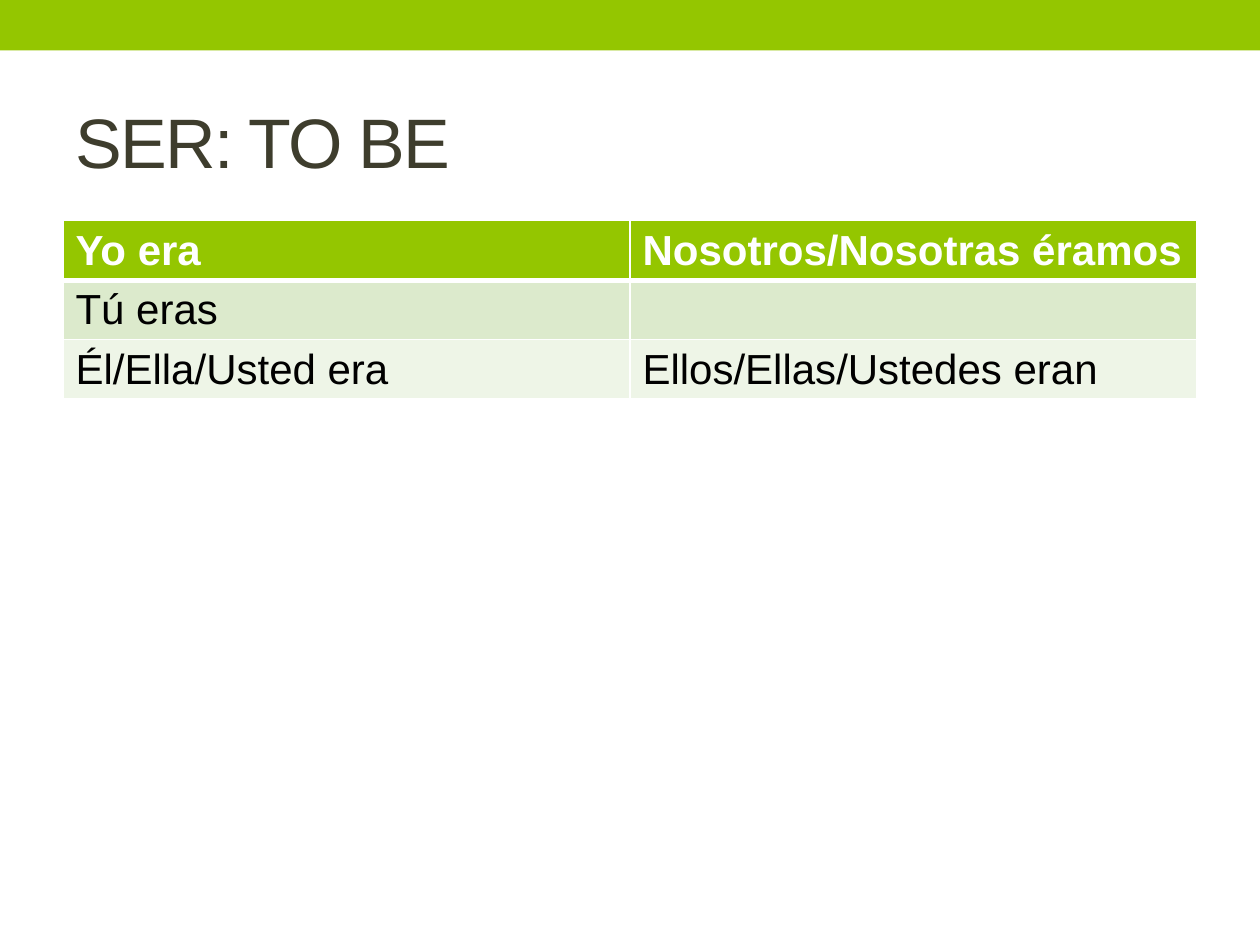
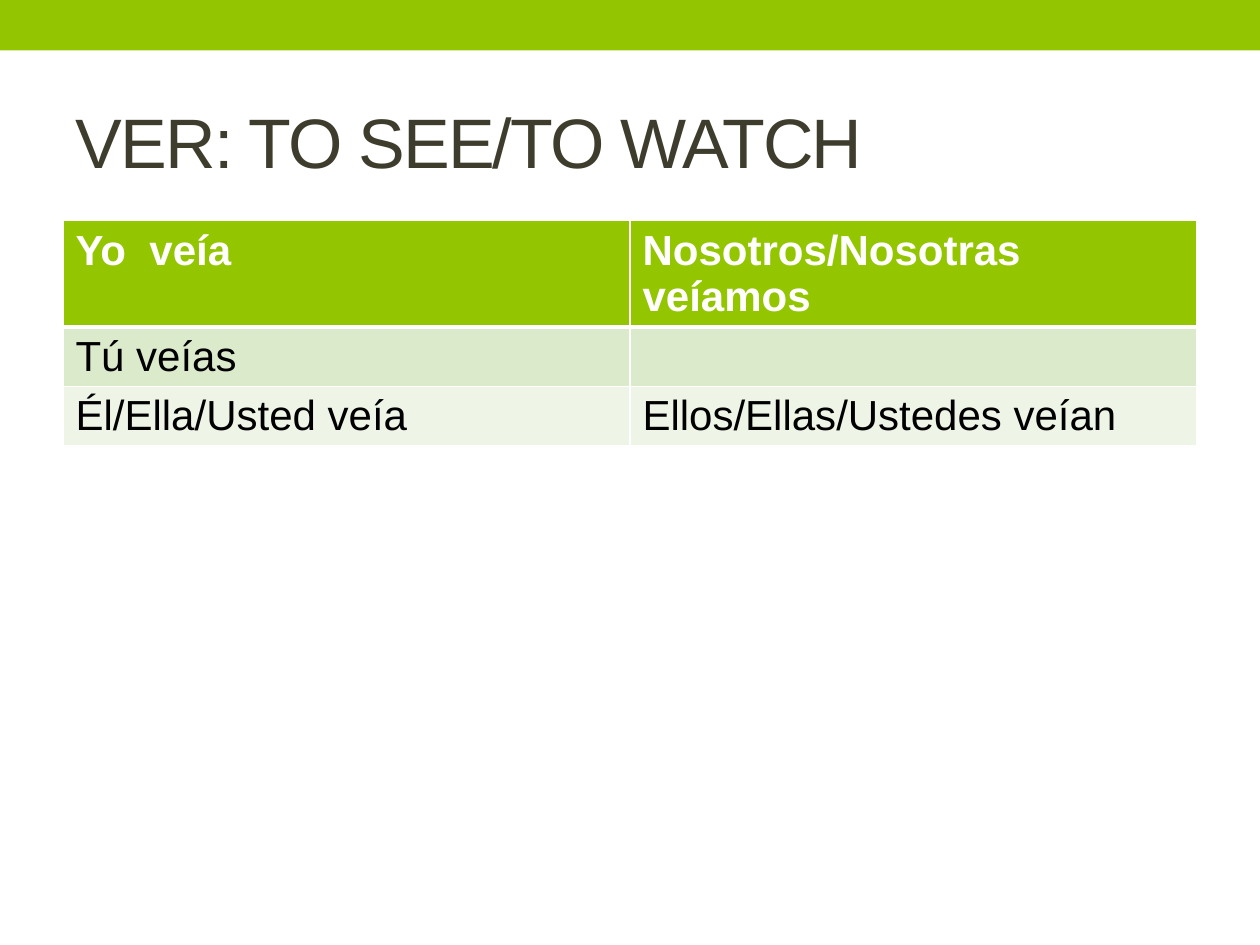
from dataclasses import dataclass

from lxml import etree
from pptx import Presentation
from pptx.dml.color import RGBColor
from pptx.enum.shapes import MSO_SHAPE
from pptx.enum.text import MSO_ANCHOR, MSO_AUTO_SIZE, PP_ALIGN
from pptx.oxml.ns import qn
from pptx.util import Cm, Pt

RECT = MSO_SHAPE.RECTANGLE
MIDDLE = MSO_ANCHOR.MIDDLE
NO_FIT = MSO_AUTO_SIZE.NONE
LEFT = PP_ALIGN.LEFT
TITLE_ONLY = 5


@dataclass(frozen=True)
class Theme:
    font: str = "Arial"
    title_size: int = 40
    cell_size: int = 24
    track: int = -100  # hundredths of a point
    green: str = "94C600"
    dark: str = "3E3D2D"
    white: str = "FFFFFF"
    black: str = "000000"
    bands: tuple = ("DCEACC", "EEF5E7")
    thin: int = 1
    thick: int = 3


THEME = Theme()

# Boxes: left, top, width, height
PAGE = (Cm(25.4), Cm(19.05))
BAND = (0, 0, PAGE[0], Cm(1.02))
TITLE = (Cm(1.27), Cm(1.47), Cm(22.86), Cm(2.74))
GRID = (Cm(1.27), Cm(4.45), Cm(22.86), Cm(3.12))

VERBS = [
    ("SER: TO BE", [
        ("Yo era", "Nosotros/Nosotras éramos"),
        ("Tú eras", ""),
        ("Él/Ella/Usted era", "Ellos/Ellas/Ustedes eran"),
    ]),
    ("VER: TO SEE/TO WATCH", [
        ("Yo  veía", "Nosotros/Nosotras veíamos"),
        ("Tú veías", ""),
        ("Él/Ella/Usted veía", "Ellos/Ellas/Ustedes veían"),
    ]),
]


def rgb(code):
    return RGBColor.from_string(code)


def style(para, size, color, bold=False):
    font = para.font
    font.name = THEME.font
    font.size = Pt(size)
    font.bold = bold
    font.color.rgb = rgb(color)


def add_band(slide, box):
    band = slide.shapes.add_shape(RECT, *box)
    band.shadow.inherit = False
    band.fill.solid()
    band.fill.fore_color.rgb = rgb(THEME.green)
    band.line.fill.background()


def set_title(slide, text, box):
    title = slide.shapes.title
    title.left, title.top, title.width, title.height = box
    frame = title.text_frame
    frame.text = text
    frame.auto_size = NO_FIT
    frame.vertical_anchor = MIDDLE
    para = frame.paragraphs[0]
    para.alignment = LEFT
    style(para, THEME.title_size, THEME.dark)
    # Tighter letter spacing
    para.runs[0]._r.get_or_add_rPr().set("spc", str(THEME.track))


def set_edges(cell, top, bottom):
    """Draw white cell borders; line elements come before the fill."""
    props = cell._tc.get_or_add_tcPr()
    widths = {"lnL": THEME.thin, "lnR": THEME.thin, "lnT": top, "lnB": bottom}
    for spot, (tag, width) in enumerate(widths.items()):
        line = etree.Element(qn(f"a:{tag}"), w=str(Pt(width)))
        fill = etree.SubElement(line, qn("a:solidFill"))
        etree.SubElement(fill, qn("a:srgbClr"), val=THEME.white)
        props.insert(spot, line)


def add_grid(slide, rows, box):
    table = slide.shapes.add_table(len(rows), len(rows[0]), *box).table
    for r, row in enumerate(rows):
        head = r == 0
        paint = THEME.green if head else THEME.bands[(r - 1) % 2]
        ink = THEME.white if head else THEME.black
        # The rule under the header is shared by the first two rows
        top = THEME.thick if r == 1 else THEME.thin
        bottom = THEME.thick if head else THEME.thin
        for c, text in enumerate(row):
            cell = table.cell(r, c)
            cell.text = text
            cell.fill.solid()
            cell.fill.fore_color.rgb = rgb(paint)
            style(cell.text_frame.paragraphs[0], THEME.cell_size, ink, head)
            set_edges(cell, top, bottom)


def add_verb(deck, name, rows):
    slide = deck.slides.add_slide(deck.slide_layouts[TITLE_ONLY])
    add_band(slide, BAND)
    set_title(slide, name, TITLE)
    add_grid(slide, rows, GRID)


def main():
    deck = Presentation()
    deck.slide_width, deck.slide_height = PAGE
    for name, rows in VERBS:
        add_verb(deck, name, rows)
    deck.save("out.pptx")


if __name__ == "__main__":
    main()
